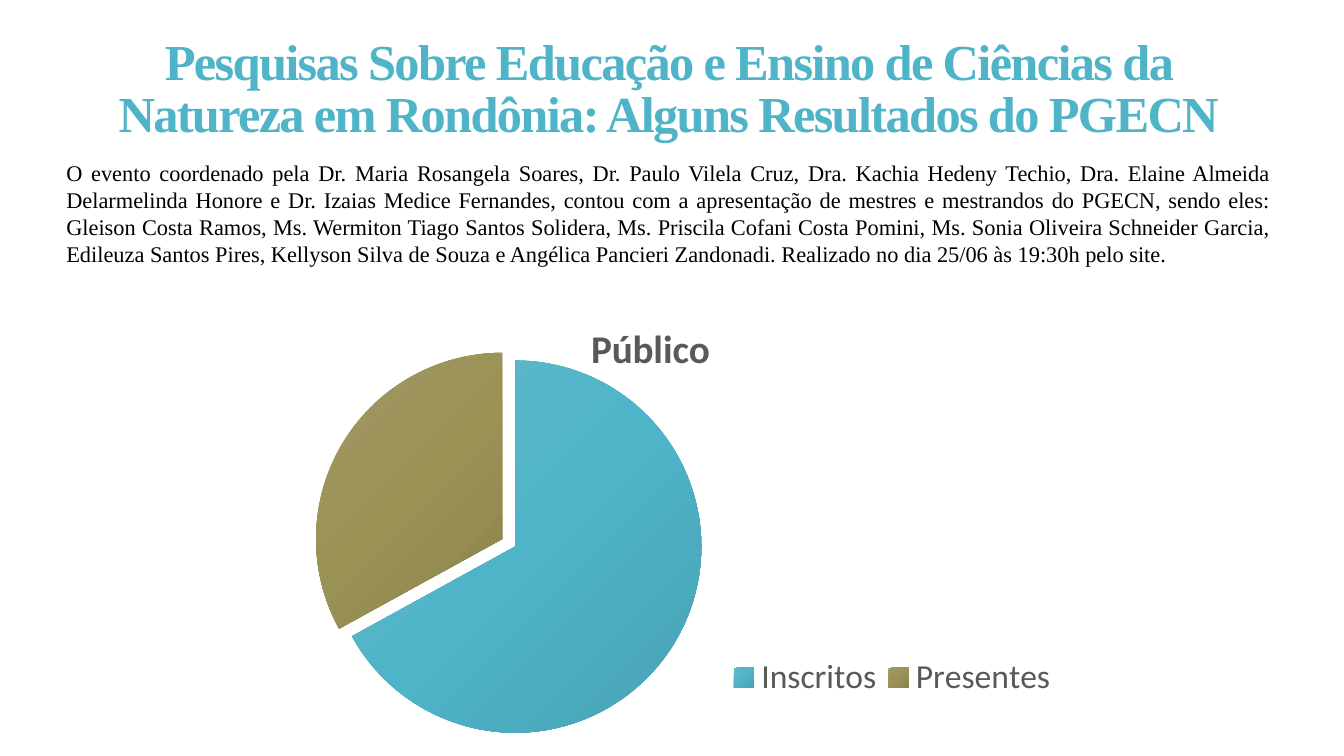
from pptx import Presentation
from pptx.chart.data import CategoryChartData
from pptx.dml.color import RGBColor
from pptx.enum.chart import XL_CHART_TYPE, XL_LEGEND_POSITION
from pptx.enum.text import MSO_ANCHOR, PP_ALIGN
from pptx.oxml import parse_xml
from pptx.oxml.ns import nsdecls
from pptx.util import Inches, Pt

PIE = XL_CHART_TYPE.PIE
BOTTOM = XL_LEGEND_POSITION.BOTTOM
TOP, MIDDLE = MSO_ANCHOR.TOP, MSO_ANCHOR.MIDDLE
CENTER, JUSTIFY = PP_ALIGN.CENTER, PP_ALIGN.JUSTIFY

COLORS = {"title": "50B4C8", "body": "000000", "chart": "595959"}
SERIF, SANS = "Times New Roman", "Calibri"

TITLE = ("Pesquisas Sobre Educação e Ensino de Ciências da Natureza em Rondônia: "
         "Alguns Resultados do PGECN")
BODY = ("O evento coordenado pela Dr. Maria Rosangela Soares, Dr. Paulo Vilela Cruz, "
        "Dra. Kachia Hedeny Techio, Dra. Elaine Almeida Delarmelinda Honore e "
        "Dr. Izaias Medice Fernandes, contou com a apresentação de mestres e mestrandos "
        "do PGECN, sendo eles: Gleison Costa Ramos, Ms. Wermiton Tiago Santos Solidera, "
        "Ms. Priscila Cofani Costa Pomini, Ms. Sonia Oliveira Schneider Garcia, "
        "Edileuza Santos Pires, Kellyson Silva de Souza e Angélica Pancieri Zandonadi. "
        "Realizado no dia 25/06 às 19:30h pelo site.")
TEXTS = [
    (TITLE, (0.74, 0, 11.78, 1.81), MIDDLE,
     {"alignment": CENTER, "line_spacing": 0.85},
     {"name": SERIF, "size": Pt(36), "bold": True}, "title", -120),
    (BODY, (0.56, 1.53, 12.14, 1.18), TOP, {"alignment": JUSTIFY},
     {"name": SERIF, "size": Pt(16)}, "body", 0),
]
CHART_BOX = (1.78, 2.71, 9.12, 4.56)
CHART_TITLE = "Público"
SLICES = [
    ("Inscritos", 67, ("61B9CB", "50B4C8", "48A2B4"), 0),
    ("Presentes", 33, ("A19965", "9B9256", "8B834D"), 8),
]
LAYOUTS = {
    "title": {"x": 0.44, "y": 0.09},
    "plot": {"x": 0.15, "y": 0.21, "w": 0.43, "h": 0.81},
    "legend": {"x": 0.59, "y": 0.83, "w": 0.37, "h": 0.1},
}


def style(font, values, color):
    for key, value in values.items():
        setattr(font, key, value)
    font.color.rgb = RGBColor.from_string(COLORS[color])


def add_text(slide, text, box, anchor, para, font, color, spacing):
    tf = slide.shapes.add_textbox(*map(Inches, box)).text_frame
    tf.word_wrap = True
    tf.vertical_anchor = anchor
    p = tf.paragraphs[0]
    for key, value in para.items():
        setattr(p, key, value)
    r = p.add_run()
    r.text = text
    style(r.font, font, color)
    if spacing:
        r.font._element.set("spc", str(spacing))


def place(element, part, after):
    for old in element.findall("{*}layout"):
        element.remove(old)
    target = '<c:layoutTarget val="inner"/>' if part == "plot" else ""
    values = LAYOUTS[part].items()
    modes = "".join(f'<c:{k}Mode val="edge"/>' for k, _ in values if k in "xy")
    sizes = "".join(f'<c:{k} val="{v}"/>' for k, v in values)
    layout = parse_xml(f'<c:layout {nsdecls("c")}><c:manualLayout>{target}{modes}{sizes}'
                       '</c:manualLayout></c:layout>')
    if after:
        element.find("{*}" + after).addnext(layout)
    else:
        element.insert(0, layout)


def paint(point, colors, explosion):
    point.format.fill.background()
    sp_pr = point.format.fill._xPr
    stops = "".join(f'<a:gs pos="{i * 50000}"><a:srgbClr val="{c}"/></a:gs>'
                    for i, c in enumerate(colors))
    gradient = parse_xml(f'<a:gradFill {nsdecls("a")} rotWithShape="1"><a:gsLst>{stops}'
                         '</a:gsLst><a:lin ang="2700000" scaled="0"/></a:gradFill>')
    sp_pr.replace(sp_pr.find("{*}noFill"), gradient)
    point.format.line.fill.background()
    if explosion:
        sp_pr.addprevious(parse_xml(f'<c:explosion {nsdecls("c")} val="{explosion}"/>'))


def add_pie(slide):
    data = CategoryChartData()
    data.categories = [name for name, *_ in SLICES]
    data.add_series("Series 1", [value for _, value, *_ in SLICES])
    chart = slide.shapes.add_chart(PIE, *map(Inches, CHART_BOX), data).chart
    style(chart.font, {"name": SANS, "size": Pt(10)}, "body")
    chart.has_title = True
    title = chart.chart_title
    r = title.text_frame.paragraphs[0].add_run()
    r.text = CHART_TITLE
    style(r.font, {"name": SANS, "size": Pt(28), "bold": True}, "chart")
    place(title._element, "title", "tx")
    chart.has_legend = True
    legend = chart.legend
    legend.position = BOTTOM
    legend.include_in_layout = False
    style(legend.font, {"name": SANS, "size": Pt(24)}, "chart")
    place(legend._element, "legend", "legendPos")
    plot = chart.plots[0]
    plot.vary_by_categories = True
    place(plot._element.getparent(), "plot", None)
    for i, (_, _, colors, explosion) in enumerate(SLICES):
        paint(plot.series[0].points[i], colors, explosion)


def main():
    """Build the event slide with its audience pie chart."""
    prs = Presentation()
    prs.slide_width, prs.slide_height = Inches(13.33), Inches(7.5)
    slide = prs.slides.add_slide(prs.slide_layouts[6])
    for item in TEXTS:
        add_text(slide, *item)
    add_pie(slide)
    prs.save("out.pptx")


if __name__ == "__main__":
    main()
